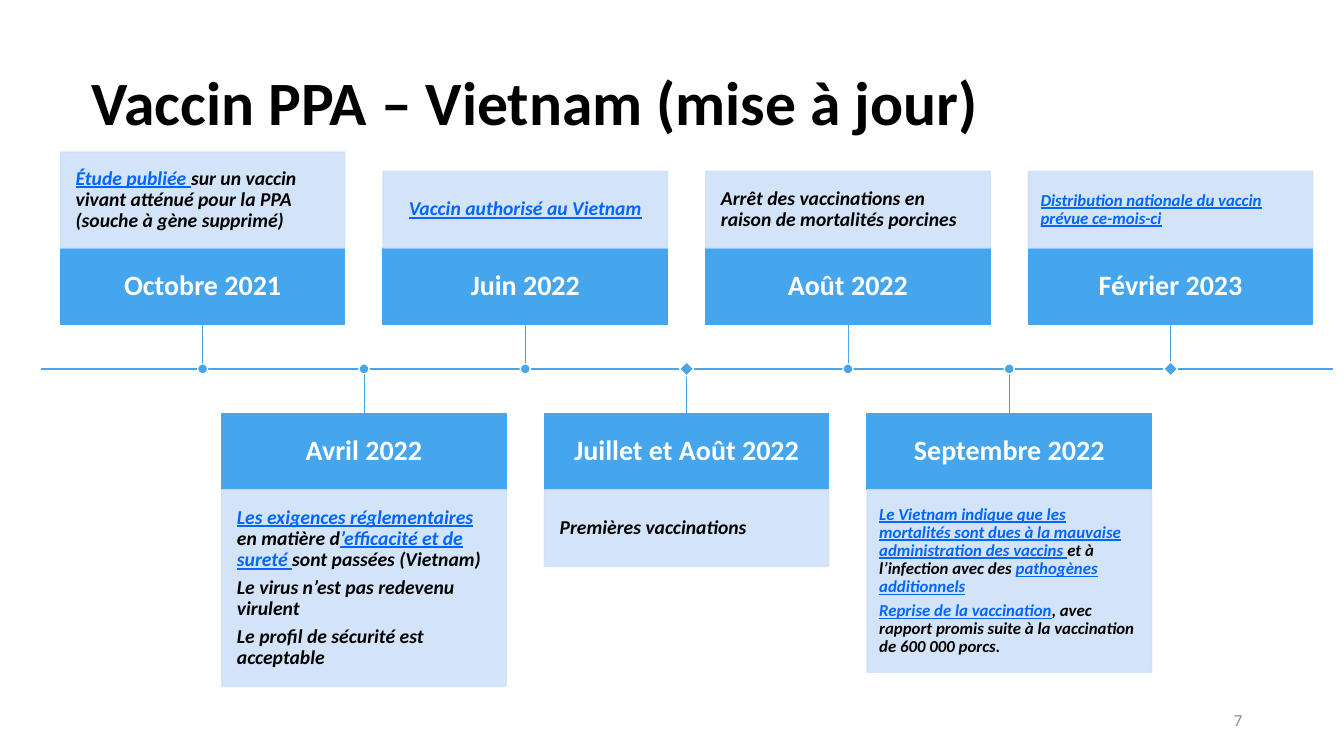
from dataclasses import dataclass

from lxml import etree
from pptx import Presentation
from pptx.dml.color import RGBColor
from pptx.enum.shapes import MSO_CONNECTOR, MSO_SHAPE
from pptx.enum.text import MSO_ANCHOR, PP_ALIGN
from pptx.oxml.ns import qn
from pptx.util import Emu, Pt

RECTANGLE, OVAL = MSO_SHAPE.RECTANGLE, MSO_SHAPE.OVAL
STRAIGHT = MSO_CONNECTOR.STRAIGHT
MIDDLE = MSO_ANCHOR.MIDDLE
LEFT, CENTER, RIGHT = PP_ALIGN.LEFT, PP_ALIGN.CENTER, PP_ALIGN.RIGHT

BLUE = RGBColor(0x45, 0xA5, 0xED)
PALE = RGBColor(0xCF, 0xE1, 0xF8)
LINK = RGBColor(0x00, 0x66, 0xFF)
BLACK = RGBColor(0x00, 0x00, 0x00)
WHITE = RGBColor(0xFF, 0xFF, 0xFF)
GREY = RGBColor(0x8C, 0x8C, 0x8C)

FONT = "Calibri"
EMU_PER_PX = 9144
FIRST_LEFT, STEP = 60, 160
CARD_WIDTH, HEADER_HEIGHT = 282, 76
UPPER_TOP, LOWER_TOP = 246, 410
AXIS_Y, AXIS_LEFT, AXIS_RIGHT = 366, 41, 1322
DOT = 10


@dataclass(frozen=True)
class Span:
    text: str
    linked: bool = False


@dataclass(frozen=True)
class Event:
    date: str
    paragraphs: list[list[Span]]
    height: int = 76
    size: int = 14
    inset: int = 15
    align: PP_ALIGN = LEFT
    marker: MSO_SHAPE = OVAL


EVENTS = [
    Event("Octobre 2021", [[
        Span("Étude publiée ", True),
        Span("sur un vaccin vivant atténué pour la PPA (souche à gène supprimé)"),
    ]], height=95),
    Event("Avril 2022", [
        [
            Span("Les exigences réglementaires ", True),
            Span("en matière d"),
            Span("’efficacité et de sureté ", True),
            Span("sont passées (Vietnam)"),
        ],
        [Span("Le virus n’est pas redevenu virulent")],
        [Span("Le profil de sécurité est acceptable")],
    ], height=195),
    Event("Juin 2022", [[Span("Vaccin authorisé au Vietnam", True)]], align=CENTER),
    Event("Juillet et Août 2022", [[Span("Premières vaccinations")]], marker=RECTANGLE),
    Event("Août 2022", [[Span("Arrêt des vaccinations en raison de mortalités porcines")]]),
    Event("Septembre 2022", [
        [
            Span("Le Vietnam indique que les mortalités sont dues à la mauvaise "
                 "administration des vaccins ", True),
            Span("et à l’infection avec des "),
            Span("pathogènes additionnels", True),
        ],
        [
            Span("Reprise de la vaccination", True),
            Span(", avec rapport promis suite à la vaccination de 600 000 porcs."),
        ],
    ], height=181, size=12, inset=12),
    Event("Février 2023", [[
        Span("Distribution nationale du vaccin prévue ce-mois-ci", True),
    ]], size=12, inset=12, marker=RECTANGLE),
]


def px(length: int) -> Emu:
    return Emu(length * EMU_PER_PX)


def add_span(para, text: str, size: int, color: RGBColor, bold: bool = True,
             italic: bool = False, underline: bool = False) -> None:
    run = para.add_run()
    run.text = text
    font = run.font
    font.name, font.size = FONT, Pt(size)
    font.bold, font.italic, font.underline = bold, italic, underline
    font.color.rgb = color


def prepare_frame(box, inset_x: int, inset_y: int):
    frame = box.text_frame
    frame.word_wrap = True
    frame.vertical_anchor = MIDDLE
    frame.margin_left = frame.margin_right = px(inset_x)
    frame.margin_top = frame.margin_bottom = px(inset_y)
    return frame


def add_label(page, left: int, top: int, width: int, height: int, text: str,
              size: int, color: RGBColor, bold: bool, align: PP_ALIGN) -> None:
    box = page.shapes.add_textbox(px(left), px(top), px(width), px(height))
    para = prepare_frame(box, 10, 5).paragraphs[0]
    para.alignment, para.line_spacing = align, 0.9
    add_span(para, text, size, color, bold)


def add_box(page, kind: MSO_SHAPE, left: int, top: int, width: int, height: int,
            fill: RGBColor, outline: RGBColor):
    box = page.shapes.add_shape(kind, px(left), px(top), px(width), px(height))
    box.shadow.inherit = False
    box.fill.solid()
    box.fill.fore_color.rgb = fill
    box.line.color.rgb = outline
    box.line.width = Pt(1)
    return box


def soften(box) -> None:
    for color in box._element.spPr.iter(qn("a:srgbClr")):
        etree.SubElement(color, qn("a:alpha")).set("val", "90000")


def add_line(page, x1: int, y1: int, x2: int, y2: int, width: float) -> None:
    line = page.shapes.add_connector(STRAIGHT, px(x1), px(y1), px(x2), px(y2))
    line.line.color.rgb = BLUE
    line.line.width = Pt(width)
    etree.SubElement(line._element.spPr, qn("a:effectLst"))


def style_para(para, align: PP_ALIGN, size: int) -> None:
    para.alignment = align
    para.line_spacing = 0.9
    para.space_after = Pt(round(size * 0.35, 1))


def add_event(page, index: int, event: Event) -> None:
    left = FIRST_LEFT + index * STEP
    center = left + CARD_WIDTH // 2
    upper = index % 2 == 0
    header_top = UPPER_TOP if upper else LOWER_TOP
    header_bottom = header_top + HEADER_HEIGHT
    detail_top = header_top - event.height if upper else header_bottom

    header = add_box(page, RECTANGLE, left, header_top, CARD_WIDTH, HEADER_HEIGHT, BLUE, BLUE)
    para = prepare_frame(header, 11, 11).paragraphs[0]
    style_para(para, CENTER, 20)
    add_span(para, event.date, 20, WHITE)

    detail = add_box(page, RECTANGLE, left, detail_top, CARD_WIDTH, event.height, PALE, PALE)
    soften(detail)
    frame = prepare_frame(detail, event.inset, event.inset)
    for number, spans in enumerate(event.paragraphs):
        para = frame.add_paragraph() if number else frame.paragraphs[0]
        style_para(para, event.align, event.size)
        for span in spans:
            add_span(para, span.text, event.size, LINK if span.linked else BLACK,
                     italic=True, underline=span.linked)

    add_line(page, center, header_bottom if upper else AXIS_Y,
             center, AXIS_Y if upper else header_top, 0.5)
    marker = add_box(page, event.marker, center - DOT // 2, AXIS_Y - DOT // 2,
                     DOT, DOT, BLUE, WHITE)
    marker.rotation = 45


def main() -> None:
    deck = Presentation()
    deck.slide_width, deck.slide_height = px(1333), px(750)
    page = deck.slides.add_slide(deck.slide_layouts[6])
    add_label(page, 942, 695, 300, 40, "7", 12, GREY, False, RIGHT)
    add_label(page, 81, 32, 1161, 145, "Vaccin PPA – Vietnam (mise à jour)",
              44, BLACK, True, LEFT)
    add_line(page, AXIS_LEFT, AXIS_Y, AXIS_RIGHT, AXIS_Y, 1)
    for index, event in enumerate(EVENTS):
        add_event(page, index, event)
    deck.save("out.pptx")


if __name__ == "__main__":
    main()
